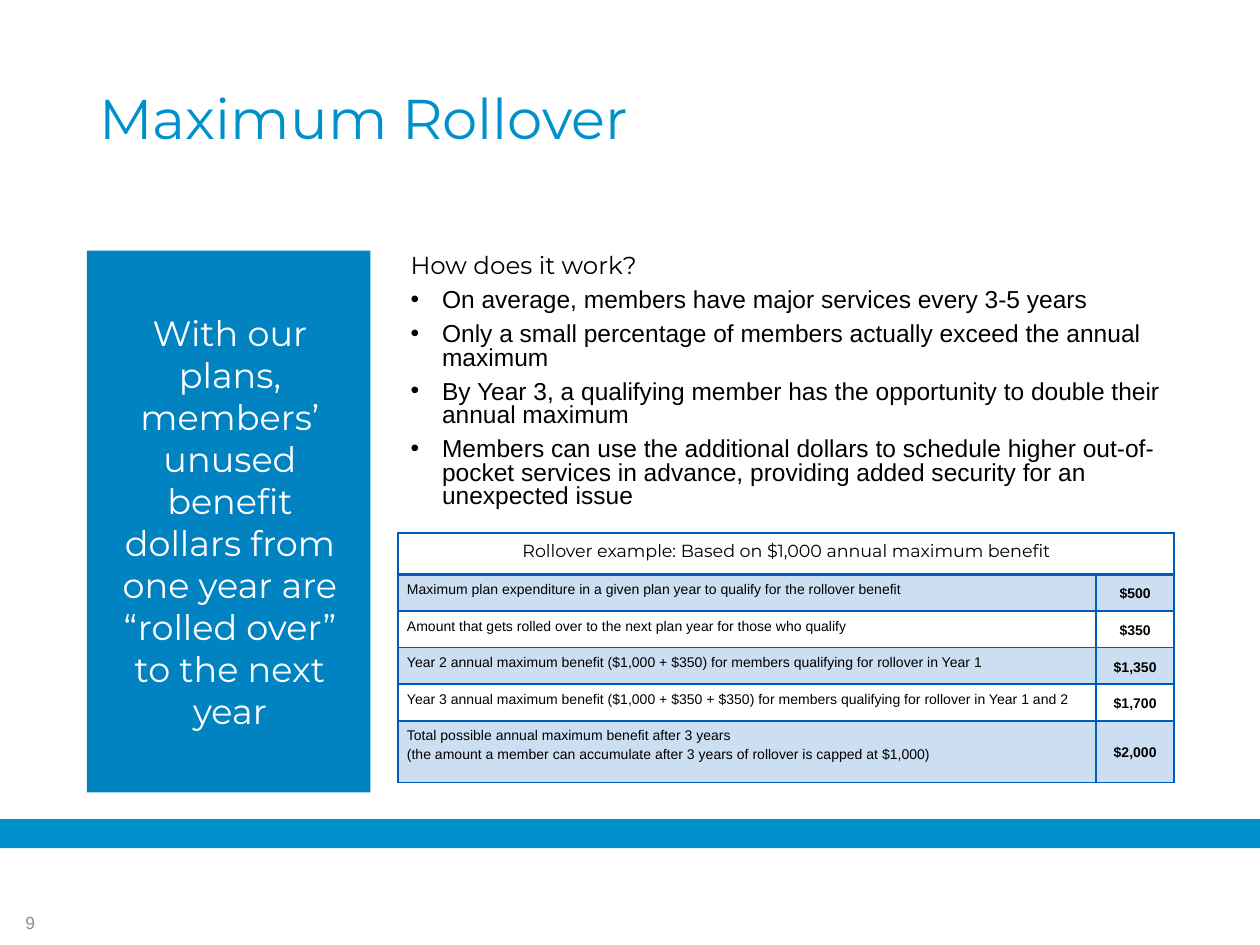
from dataclasses import dataclass
from typing import NamedTuple

from lxml.etree import SubElement
from pptx import Presentation
from pptx.dml.color import RGBColor
from pptx.enum.shapes import MSO_SHAPE as Preset
from pptx.enum.text import MSO_ANCHOR as Anchor, PP_ALIGN as Align
from pptx.oxml.ns import qn
from pptx.util import Inches, Pt


@dataclass(frozen=True)
class Theme:
    heading_font: str = "Montserrat"
    body_font: str = "Arial"
    accent: str = "0091CC"
    panel: str = "0083C0"
    grid: str = "005CB9"
    dark: str = "000000"
    light: str = "FFFFFF"
    muted: str = "8C8C8C"
    title_size: int = 32
    panel_size: int = 20
    body_size: int = 14
    small_size: int = 10
    cell_size: int = 8
    band_opacity: int = 20


class Box(NamedTuple):
    """Left, top, width and height in percent of the slide."""
    left: float
    top: float
    width: float
    height: float


class Style(NamedTuple):
    font: str
    size: int
    color: str
    bold: bool = False


class ExampleRow(NamedTuple):
    description: str
    amount: str
    height: float


THEME = Theme()
WIDTH, HEIGHT = Inches(10), Inches(7.5)

BAND = Box(0, 86.67, 100, 3.07)
PANEL = Box(6.9, 26.53, 22.5, 57.33)
TITLE = Box(6.9, 3.87, 86.2, 17.87)
BODY = Box(31.6, 26.4, 61.5, 33.33)
PANEL_TEXT = Box(7.7, 27.73, 21.1, 54.93)
TABLE = Box(31.6, 56.4, 61.5, 26.27)
NUMBER = Box(0, 95.2, 4.8, 4.8)

COLUMNS = (55.4, 6.2)
HEADER_HEIGHT, ROW_HEIGHT, LAST_HEIGHT = 4.4, 3.87, 6.53

BULLETS = (
    "On average, members have major services every 3-5 years",
    "Only a small percentage of members actually exceed the annual maximum",
    "By Year 3, a qualifying member has the opportunity to double their annual maximum",
    "Members can use the additional dollars to schedule higher out-of-pocket services "
    "in advance, providing added security for an unexpected issue",
)
EXAMPLE_TITLE = "Rollover example: Based on $1,000 annual maximum benefit"
EXAMPLE = (
    ExampleRow("Maximum plan expenditure in a given plan year to qualify for the "
               "rollover benefit", "$500", ROW_HEIGHT),
    ExampleRow("Amount that gets rolled over to the next plan year for those who qualify",
               "$350", ROW_HEIGHT),
    ExampleRow("Year 2 annual maximum benefit ($1,000 + $350) for members qualifying for "
               "rollover in Year 1", "$1,350", ROW_HEIGHT),
    ExampleRow("Year 3 annual maximum benefit ($1,000 + $350 + $350) for members qualifying "
               "for rollover in Year 1 and 2", "$1,700", ROW_HEIGHT),
    ExampleRow("Total possible annual maximum benefit after 3 years\n(the amount a member can "
               "accumulate after 3 years of rollover is capped at $1,000)",
               "$2,000", LAST_HEIGHT),
)


def across(share: float) -> int:
    return round(WIDTH * share / 100)


def down(share: float) -> int:
    return round(HEIGHT * share / 100)


def place(box: Box) -> tuple:
    return across(box.left), down(box.top), across(box.width), down(box.height)


def apply(target, values: dict) -> None:
    for name, value in values.items():
        setattr(target, name, value)


def write(frame, text: str, style: Style, **layout) -> None:
    """Fill a text frame, one paragraph per line of text."""
    frame.text = text
    for paragraph in frame.paragraphs:
        apply(paragraph, layout)
        for run in paragraph.runs:
            apply(run.font, {"name": style.font, "size": Pt(style.size), "bold": style.bold})
            run.font.color.rgb = RGBColor.from_string(style.color)


def add_text(slide, box: Box, text: str, style: Style, anchor=Anchor.MIDDLE, **layout):
    frame = slide.shapes.add_textbox(*place(box)).text_frame
    apply(frame, {"word_wrap": True, "vertical_anchor": anchor})
    write(frame, text, style, **layout)
    return frame


def add_block(slide, box: Box, color: str) -> None:
    shape = slide.shapes.add_shape(Preset.RECTANGLE, *place(box))
    shape.shadow.inherit = False
    shape.fill.solid()
    shape.fill.fore_color.rgb = RGBColor.from_string(color)
    shape.line.fill.background()


def add_bullet(paragraph) -> None:
    properties = paragraph._p.get_or_add_pPr()
    properties.set("marL", str(Inches(0.25)))
    properties.set("indent", str(-Inches(0.25)))
    SubElement(properties, qn("a:buFont"), typeface=THEME.body_font)
    SubElement(properties, qn("a:buChar"), char="•")


def format_cell(cell, row: int, anchor) -> None:
    """Set margins, borders and the banded fill of a cell."""
    apply(cell, {"margin_left": Inches(0.07), "margin_right": Inches(0.07),
                 "margin_top": Inches(0.04), "margin_bottom": Inches(0.04),
                 "vertical_anchor": anchor})
    properties = cell._tc.get_or_add_tcPr()
    widths = {"L": 1, "R": 1, "T": 2 if row == 1 else 1, "B": 2 if row == 0 else 1}
    for side, width in widths.items():
        line = SubElement(properties, qn(f"a:ln{side}"), w=str(Pt(width)))
        SubElement(SubElement(line, qn("a:solidFill")), qn("a:srgbClr"), val=THEME.grid)
    if row % 2 == 0:
        cell.fill.background()
        return
    cell.fill.solid()
    cell.fill.fore_color.rgb = RGBColor.from_string(THEME.grid)
    color = next(properties.find(qn("a:solidFill")).iter(qn("a:srgbClr")))
    SubElement(color, qn("a:alpha"), val=str(THEME.band_opacity * 1000))


def add_example(slide) -> None:
    table = slide.shapes.add_table(len(EXAMPLE) + 1, len(COLUMNS), *place(TABLE)).table
    apply(table, {"first_row": False, "horz_banding": False})
    for column, share in zip(table.columns, COLUMNS):
        column.width = across(share)
    heights = (HEADER_HEIGHT, *(item.height for item in EXAMPLE))
    for row, share in zip(table.rows, heights):
        row.height = down(share)

    # Header across both columns
    header = table.cell(0, 0)
    header.merge(table.cell(0, 1))
    for column in range(len(COLUMNS)):
        format_cell(table.cell(0, column), 0, Anchor.TOP)
    write(header.text_frame, EXAMPLE_TITLE,
          Style(THEME.heading_font, THEME.small_size, THEME.dark),
          alignment=Align.CENTER, line_spacing=1.15)

    # Descriptions and amounts
    plain = Style(THEME.body_font, THEME.cell_size, THEME.dark)
    for row, item in enumerate(EXAMPLE, start=1):
        description, amount = table.cell(row, 0), table.cell(row, 1)
        format_cell(description, row, Anchor.TOP)
        format_cell(amount, row, Anchor.MIDDLE)
        write(description.text_frame, item.description, plain, line_spacing=1.15)
        write(amount.text_frame, item.amount, plain._replace(bold=True),
              alignment=Align.CENTER, line_spacing=1.15)


def main() -> None:
    presentation = Presentation()
    apply(presentation, {"slide_width": WIDTH, "slide_height": HEIGHT})
    slide = presentation.slides.add_slide(presentation.slide_layouts[6])

    # Coloured blocks
    add_block(slide, BAND, THEME.accent)
    add_block(slide, PANEL, THEME.panel)

    # Title
    add_text(slide, TITLE, "Maximum Rollover",
             Style(THEME.heading_font, THEME.title_size, THEME.accent), line_spacing=0.9)

    # Explanation: a heading and its bullets
    body = add_text(slide, BODY, "\n".join(("How does it work?", *BULLETS)),
                    Style(THEME.body_font, THEME.body_size, THEME.dark),
                    anchor=Anchor.TOP, line_spacing=0.8)
    heading, *points = body.paragraphs
    heading.runs[0].font.name = THEME.heading_font
    for point in points:
        point.space_before = Pt(6)
        add_bullet(point)

    # Panel message, example table and slide number
    add_text(slide, PANEL_TEXT, "With our plans, members’ unused benefit dollars from one "
             "year are “rolled over” to the next year",
             Style(THEME.heading_font, THEME.panel_size, THEME.light), alignment=Align.CENTER)
    add_example(slide)
    add_text(slide, NUMBER, "9", Style(THEME.body_font, THEME.small_size, THEME.muted),
             alignment=Align.CENTER)

    presentation.save("out.pptx")


if __name__ == "__main__":
    main()
